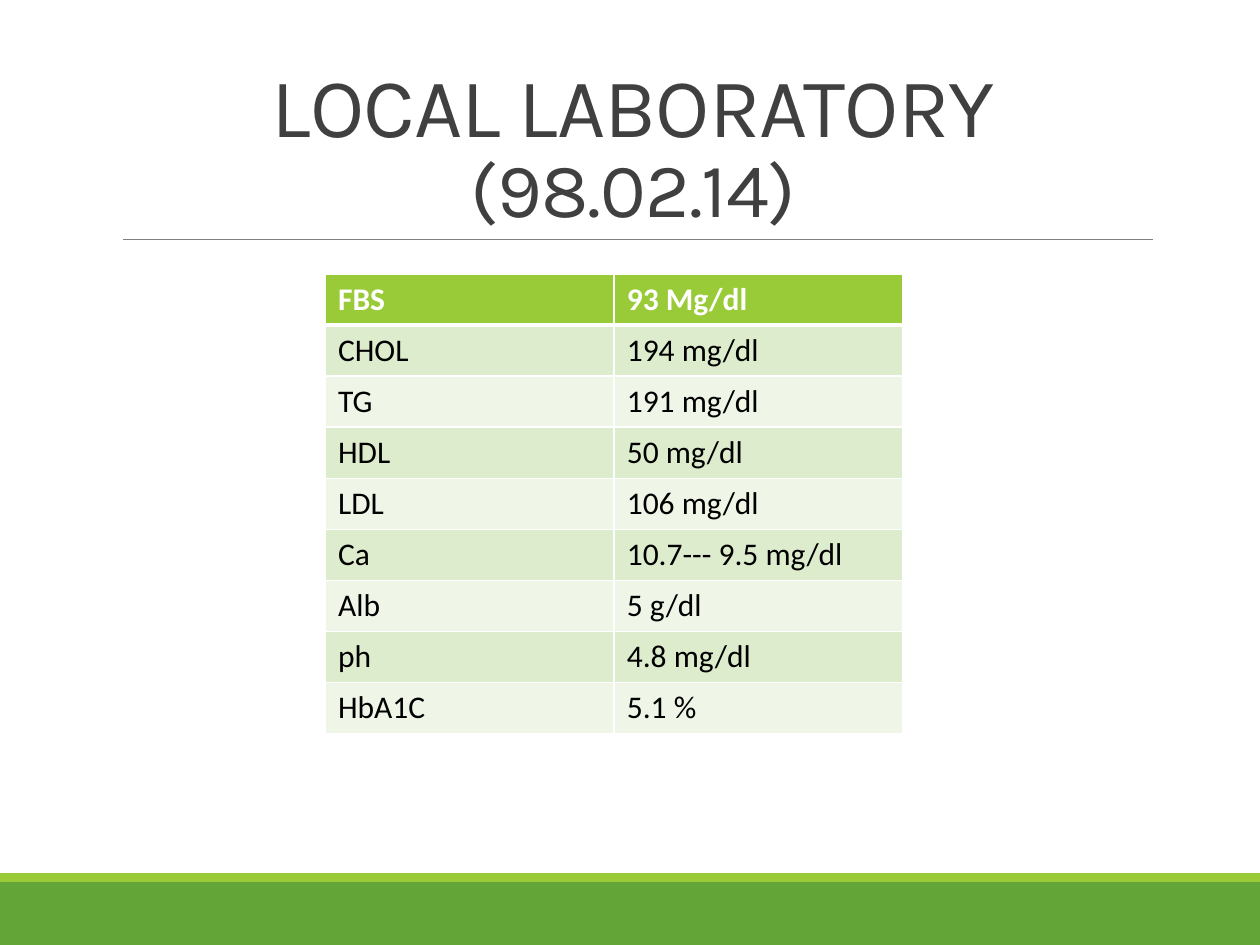
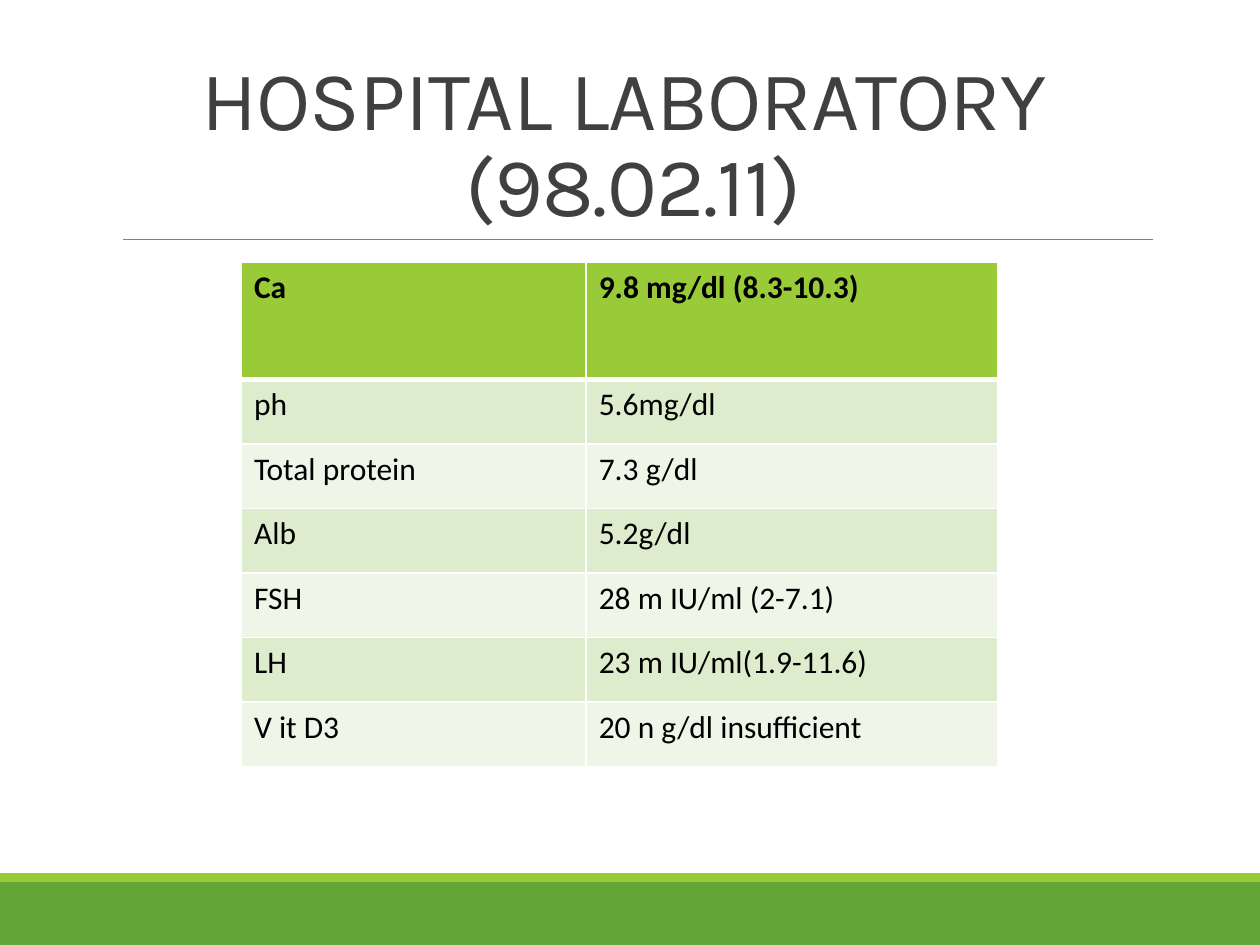
from lxml.etree import SubElement
from pptx import Presentation
from pptx.dml.color import RGBColor
from pptx.enum.shapes import MSO_CONNECTOR, MSO_SHAPE
from pptx.enum.text import MSO_ANCHOR, PP_ALIGN
from pptx.oxml.ns import qn
from pptx.util import Pt

WIDTH, HEIGHT = 720, 540
WHITE, BLACK, GREY, RULE = "FFFFFF", "000000", "404040", "808080"
GREEN, LIME = "63A537", "99CB38"
BANDS = ("EFF6E8", "DEECCE")
TITLE_FONT, BODY_FONT = "Karla", "Calibri"


def color(hex_value):
    return RGBColor.from_string(hex_value)


def set_format(font, formats):
    font.color.rgb = color(formats["color"])
    for name, value in formats.items():
        if name != "color":
            setattr(font, name, value)


class LabDeck:
    def __init__(self):
        self.presentation = Presentation()
        self.presentation.slide_width = Pt(WIDTH)
        self.presentation.slide_height = Pt(HEIGHT)
        self.slide = None

    def add_slide(self):
        layout = self.presentation.slide_layouts[6]
        self.slide = self.presentation.slides.add_slide(layout)
        self.band(504, 36, GREEN)
        self.band(499, 5, LIME)
        self.rule(70.5, 659, 136.8)

    def band(self, top, height, fill):
        shape = self.slide.shapes.add_shape(
            MSO_SHAPE.RECTANGLE, 0, Pt(top), Pt(WIDTH), Pt(height))
        shape.shadow.inherit = False
        shape.fill.solid()
        shape.fill.fore_color.rgb = color(fill)
        shape.line.fill.background()

    def rule(self, left, right, top):
        line = self.slide.shapes.add_connector(
            MSO_CONNECTOR.STRAIGHT, Pt(left), Pt(top), Pt(right), Pt(top))
        line.line.color.rgb = color(RULE)
        line.line.width = Pt(0.5)
        SubElement(line._element.spPr, qn("a:effectLst"))

    def title(self, lines):
        """Each line is a (text, size) pair."""
        box = self.slide.shapes.add_textbox(Pt(65), Pt(22.5), Pt(594), Pt(114.3))
        frame = box.text_frame
        frame.word_wrap = True
        frame.vertical_anchor = MSO_ANCHOR.BOTTOM
        paragraph = frame.paragraphs[0]
        paragraph.alignment = PP_ALIGN.CENTER
        paragraph.line_spacing = 0.85
        for index, (text, size) in enumerate(lines):
            if index:
                paragraph.add_line_break()
            run = paragraph.add_run()
            run.text = text
            set_format(run.font, {"name": TITLE_FONT, "size": Pt(size), "color": GREY})
            run.font._element.set("spc", "-50")

    def cell_borders(self, cell, widths):
        properties = cell._tc.get_or_add_tcPr()
        for side, width in widths.items():
            border = SubElement(properties, qn(f"a:ln{side}"), w=str(Pt(width)))
            fill = SubElement(border, qn("a:solidFill"))
            SubElement(fill, qn("a:srgbClr"), val=WHITE)

    def table(self, left, top, columns, header_height, row_height, header_color, rows):
        heights = [header_height] + [row_height] * (len(rows) - 1)
        table = self.slide.shapes.add_table(
            len(rows), len(columns), Pt(left), Pt(top),
            Pt(sum(columns)), Pt(sum(heights))).table
        table.horz_banding = False
        for column, width in zip(table.columns, columns):
            column.width = Pt(width)
        for index, values in enumerate(rows):
            table.rows[index].height = Pt(heights[index])
            header = index == 0
            for cell, value in zip(table.rows[index].cells, values):
                # The line under the header is thicker than the others
                self.cell_borders(cell, {"L": 1, "R": 1, "T": 3 if index == 1 else 1,
                                         "B": 3 if header else 1})
                cell.fill.solid()
                cell.fill.fore_color.rgb = color(LIME if header else BANDS[index % 2])
                cell.text = value
                set_format(cell.text_frame.paragraphs[0].runs[0].font, {
                    "name": BODY_FONT, "size": Pt(18), "bold": header,
                    "color": header_color if header else BLACK})


def main():
    deck = LabDeck()

    # First laboratory
    deck.add_slide()
    deck.title([("LOCAL LABORATORY", 48), ("(98.02.14)", 44)])
    deck.table(186, 156.5, [165, 165], 29.2, 29.2, WHITE, [
        ("FBS", "93 Mg/dl"),
        ("CHOL", "194 mg/dl"),
        ("TG", "191 mg/dl"),
        ("HDL", "50 mg/dl"),
        ("LDL", "106 mg/dl"),
        ("Ca", "10.7--- 9.5 mg/dl"),
        ("Alb", "5 g/dl"),
        ("ph", "4.8 mg/dl"),
        ("HbA1C", "5.1 %"),
    ])

    # Second laboratory
    deck.add_slide()
    deck.title([("HOSPITAL LABORATORY ", 48), ("(98.02.11)", 48)])
    deck.table(138, 150, [197, 235], 66.7, 36.9, BLACK, [
        ("Ca", "9.8 mg/dl (8.3-10.3)"),
        ("ph", "5.6mg/dl"),
        ("Total protein", "7.3 g/dl"),
        ("Alb", "5.2g/dl"),
        ("FSH", "28 m IU/ml (2-7.1)"),
        ("LH", "23 m IU/ml(1.9-11.6)"),
        ("V it D3", "20 n g/dl insufficient"),
    ])

    deck.presentation.save("out.pptx")


if __name__ == "__main__":
    main()
